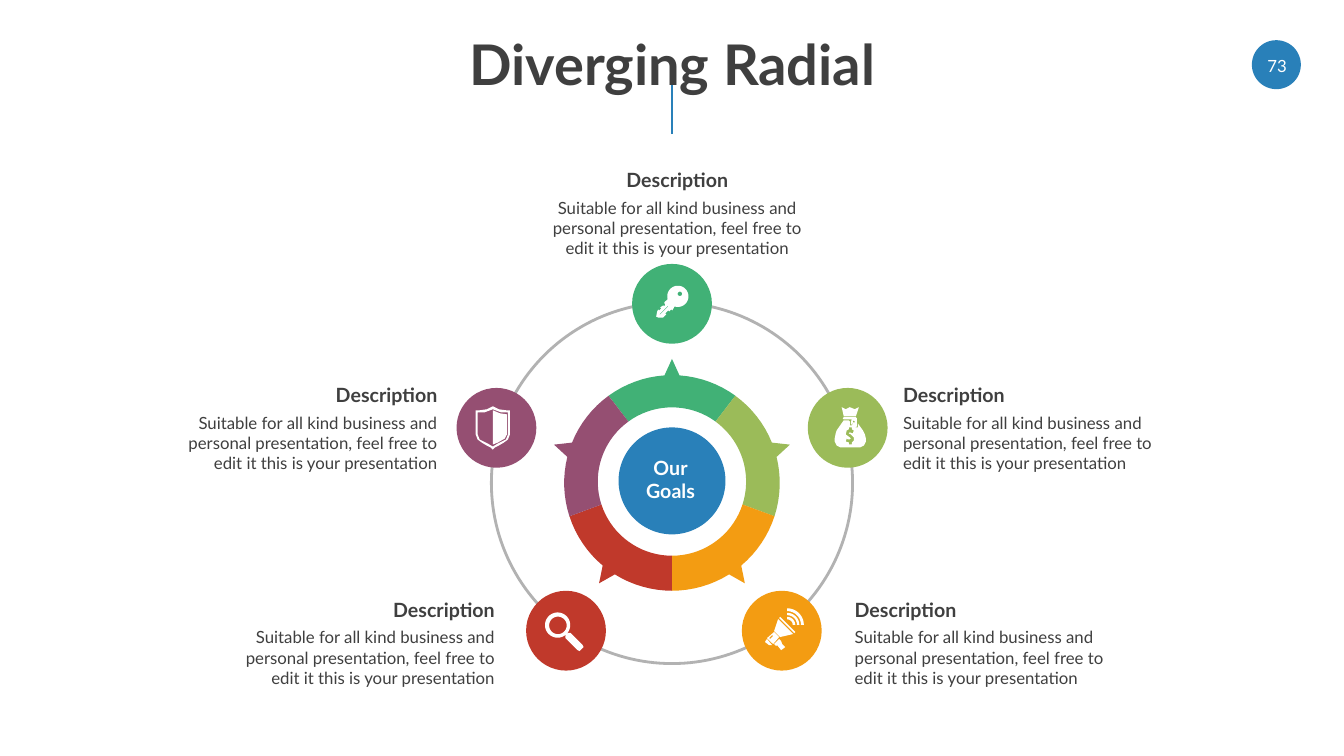
from math import cos, radians, sin

from lxml.etree import SubElement
from pptx import Presentation
from pptx.dml.color import RGBColor
from pptx.enum.shapes import MSO_CONNECTOR, MSO_SHAPE
from pptx.enum.text import MSO_ANCHOR, MSO_AUTO_SIZE, PP_ALIGN
from pptx.oxml.ns import qn
from pptx.util import Pt

BLUE, GREY, INK, WHITE = "2980B9", "B2B2B2", "3F3F3F", "FFFFFF"
CENTER_X, CENTER_Y = 480, 345
DISC = 57
ICON_UNIT = 0.72
BODY_WIDTH, HEADING_WIDTH = 201.6, 90
DESCRIPTION = ("Suitable for all kind business and personal presentation, "
               "feel free to edit it this is your presentation")

TITLE_FONT = {"size": Pt(40), "bold": True}
HEADING_FONT = {"size": Pt(14), "bold": True}
BODY_FONT = {"size": Pt(12), "bold": False}


def rgb(hex_value):
    return RGBColor.from_string(hex_value)


def arc(cx, cy, radius, start, end):
    """Points on a circle; angles run clockwise in degrees from the top."""
    steps = max(2, round(abs(end - start) / 4))
    angles = [radians(start + (end - start) * i / steps) for i in range(steps + 1)]
    return [(cx + radius * sin(a), cy - radius * cos(a)) for a in angles]


def band(cx, cy, inner, outer, start, end):
    return arc(cx, cy, outer, start, end) + arc(cx, cy, inner, end, start)


KEY = [
    arc(21.5, 11, 10.5, -106, 198)
    + [(16, 25), (15, 24), (13, 26), (12, 25), (9, 28), (10, 29), (7, 32), (2, 32),
       (0, 31), (1, 26), (2, 24), (3, 25), (5, 23), (4, 22), (7, 20), (8, 21),
       (9, 19), (8, 18), (9, 18), (8, 17)],
    arc(23.5, 8.5, 2.2, 0, 360),
    [(4, 29), (3, 29), (12, 20), (12, 21)],
]
MONEY_BAG = [
    [(9, 13), (14, 13), (15, 14), (15, 18), (17, 18), (18, 15), (20, 15), (20, 20),
     (23, 20), (23, 16), (28, 23), (30, 27), (31, 31), (31, 34), (29, 38), (25, 40),
     (6, 40), (2, 38), (0, 34), (0, 31), (1, 26), (2, 23)],
    [(17, 35), (17, 37), (14, 37), (14, 35), (11, 34), (12, 31), (13, 32), (15, 32),
     (16, 31), (15, 30), (11, 27), (12, 23), (14, 22), (14, 20), (17, 20), (17, 22),
     (19, 23), (18, 26), (15, 25), (14, 26), (16, 27), (19, 30), (19, 33)],
    [(9, 9), (7, 0), (11, 2), (15, 0), (20, 2), (24, 0), (21, 9)],
    [(22, 12), (22, 19), (21, 20), (20, 19), (20, 14), (18, 13), (18, 17), (16, 17),
     (16, 15), (17, 12), (9, 12), (8, 11), (9, 10), (21, 10), (22, 11)],
]
MEGAPHONE = [band(22, 17, inner, outer, 0, 90)
             for inner, outer in ((5.5, 8), (9.7, 12), (13.7, 16.5))] + [
    [(1, 32), (0, 34), (4, 37), (6, 37), (7, 37), (2, 31)],
    [(14, 29), (8, 36), (2, 30), (9, 24)],
    [(8, 28), (7, 27), (4, 30), (5, 31)],
    [(14, 10), (29, 25), (30, 24), (15, 9)],
    [(9, 23), (15, 29), (28, 26), (13, 11)],
    [(19, 38), (17, 36), (16, 33), (14, 31), (9, 36), (11, 38), (12, 37), (16, 42),
     (20, 39)],
]
MAGNIFIER = [
    arc(13.2, 13.2, 12.5, 0, 360),
    arc(13.5, 13.5, 8.7, 0, 360),
    [(22, 22), (21, 24), (21, 26), (33, 38), (35, 39), (36, 38), (38, 36), (39, 35),
     (38, 33), (26, 21), (24, 21)],
]
SHIELD = [
    [(17, 0), (23, 3), (30, 4), (34, 4), (34, 28), (32, 33), (28, 36), (23, 39),
     (19, 41), (17, 43), (15, 41), (11, 39), (6, 36), (2, 33), (0, 28), (0, 4),
     (4, 4), (11, 3)],
    [(32, 6), (32, 28), (30, 33), (22, 37), (17, 40), (12, 37), (4, 33), (2, 28),
     (2, 6), (9, 6), (17, 3), (25, 6)],
    [(17, 4), (24, 7), (31, 8), (31, 28), (29, 32), (22, 36), (17, 38)],
]

# colour, disc centre, icon, icon corner, text left and top, alignment
GOALS = [
    ("41B176", (480, 217), KEY, (468.7, 203.8), (383, 116.6), PP_ALIGN.CENTER),
    ("9BBB59", (605.5, 305.6), MONEY_BAG, (596.2, 290.9), (638, 270), PP_ALIGN.LEFT),
    ("F39C12", (558.4, 450.5), MEGAPHONE, (546.5, 434.2), (603.4, 423.4), PP_ALIGN.LEFT),
    ("C0392B", (404.3, 450.5), MAGNIFIER, (388.8, 437), (159, 423.4), PP_ALIGN.RIGHT),
    ("954F72", (354.6, 305.6), SHIELD, (339.8, 290.2), (118, 270), PP_ALIGN.RIGHT),
]
HEADING_SHIFT = {PP_ALIGN.LEFT: 0, PP_ALIGN.CENTER: 0.5, PP_ALIGN.RIGHT: 1}


def write(frame, lines, font, color, align, anchor=MSO_ANCHOR.TOP, spacing=None):
    settings = {"word_wrap": True, "auto_size": MSO_AUTO_SIZE.NONE,
                "vertical_anchor": anchor}
    for key, value in settings.items():
        setattr(frame, key, value)
    frame.text = "\n".join(lines)
    for paragraph in frame.paragraphs:
        paragraph.alignment = align
        paragraph.line_spacing = spacing
        for run in paragraph.runs:
            for key, value in {"name": "Lato", **font}.items():
                setattr(run.font, key, value)
            run.font.color.rgb = rgb(color)


def add_label(slide, box, lines, font, color, align, anchor=MSO_ANCHOR.TOP):
    label = slide.shapes.add_textbox(*map(Pt, box))
    write(label.text_frame, lines, font, color, align, anchor)


def add_circle(slide, cx, cy, diameter, fill=None, line=None):
    circle = slide.shapes.add_shape(MSO_SHAPE.OVAL, Pt(cx - diameter / 2),
                                    Pt(cy - diameter / 2), Pt(diameter), Pt(diameter))
    circle.shadow.inherit = False
    if fill:
        circle.fill.solid()
        circle.fill.fore_color.rgb = rgb(fill)
    else:
        circle.fill.background()
    if line:
        circle.line.color.rgb = rgb(line)
        circle.line.width = Pt(2)
    else:
        circle.line.fill.background()


def add_outline(slide, contours, origin, unit, fill):
    """Draw closed contours as one shape; a contour inside another is a hole."""
    first, *others = [[(Pt(x * unit), Pt(y * unit)) for x, y in contour]
                      for contour in contours]
    builder = slide.shapes.build_freeform(*first[0])
    builder.add_line_segments(first[1:])
    for contour in others:
        builder.move_to(*contour[0])
        builder.add_line_segments(contour[1:])
    outline = builder.convert_to_shape(*map(Pt, origin))
    outline.shadow.inherit = False
    outline.fill.solid()
    outline.fill.fore_color.rgb = rgb(fill)
    outline.line.fill.background()


def add_ring_segment(slide, angle, fill):
    segment = (arc(0, 0, 77, angle - 36, angle - 4)
               + arc(0, 0, 88.6, angle, angle)[:1]
               + arc(0, 0, 77, angle + 4, angle + 36)
               + arc(0, -1, 53, angle + 36, angle - 36))
    add_outline(slide, [segment], (CENTER_X, CENTER_Y), 1, fill)


def add_title(slide, text):
    stem = slide.shapes.add_connector(MSO_CONNECTOR.STRAIGHT, Pt(CENTER_X), Pt(95.8),
                                      Pt(CENTER_X), Pt(53.3))
    stem.line.color.rgb = rgb(BLUE)
    stem.line.width = Pt(2)
    SubElement(stem.element.spPr, qn("a:effectLst"))
    title = slide.shapes.title
    place = {"left": Pt(66.2), "top": Pt(14.4), "width": Pt(828), "height": Pt(67.7)}
    for key, value in place.items():
        setattr(title, key, value)
    write(title.text_frame, [text], TITLE_FONT, INK, PP_ALIGN.CENTER,
          MSO_ANCHOR.MIDDLE, 0.9)
    stem.element.addnext(title.element)


def add_description(slide, left, top, align):
    heading_left = left + HEADING_SHIFT[align] * (BODY_WIDTH - HEADING_WIDTH)
    add_label(slide, (heading_left, top, HEADING_WIDTH, 24.2), ["Description"],
              HEADING_FONT, INK, align)
    add_label(slide, (left, top + 21, BODY_WIDTH, 51), [DESCRIPTION],
              BODY_FONT, INK, align)


def main():
    deck = Presentation()
    deck.slide_width, deck.slide_height = Pt(960), Pt(540)
    slide = deck.slides.add_slide(deck.slide_layouts[5])
    add_circle(slide, 911.7, 46.2, 35, BLUE)
    add_title(slide, "Diverging Radial")
    add_circle(slide, CENTER_X, CENTER_Y, 258, line=GREY)
    for index, (color, *_) in enumerate(GOALS):
        add_ring_segment(slide, index * 72, color)
    add_circle(slide, CENTER_X, 343.5, 76.4, BLUE)
    for color, center, icon, corner, text_corner, align in GOALS:
        add_circle(slide, *center, DISC, color)
        add_outline(slide, icon, corner, ICON_UNIT, WHITE)
        add_description(slide, *text_corner, align)
    add_label(slide, (453, 321.8, 52, 41), ["Our", "Goals"], HEADING_FONT, WHITE,
              PP_ALIGN.CENTER)
    add_label(slide, (887, 32.4, 50.4, 28.8), ["73"], BODY_FONT, WHITE,
              PP_ALIGN.CENTER, MSO_ANCHOR.MIDDLE)
    deck.save("out.pptx")


if __name__ == "__main__":
    main()
